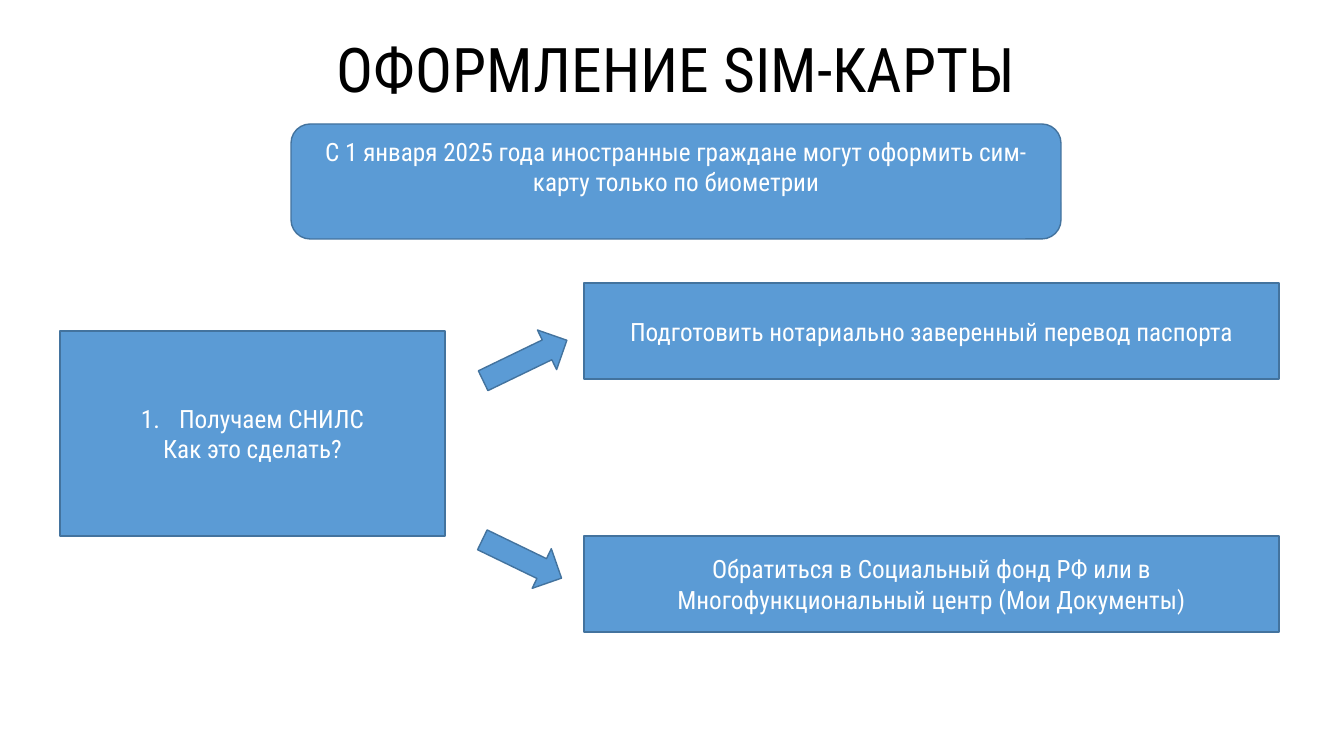
from lxml import etree
from pptx import Presentation
from pptx import util as u
from pptx.dml.color import RGBColor
from pptx.enum import shapes, text
from pptx.oxml.ns import qn

FONT = "Roboto Condensed"
BLACK = RGBColor(0x00, 0x00, 0x00)
WHITE = RGBColor(0xFF, 0xFF, 0xFF)
BLUE = RGBColor(0x5B, 0x9B, 0xD5)
OUTLINE = RGBColor(0x43, 0x73, 0x9E)
RECT = shapes.MSO_SHAPE.RECTANGLE
ROUNDED = shapes.MSO_SHAPE.ROUNDED_RECTANGLE
ARROW = shapes.MSO_SHAPE.DOWN_ARROW

TITLE = "ОФОРМЛЕНИЕ SIM-КАРТЫ"
RULE = "С 1 января 2025 года иностранные граждане могут оформить сим-карту только по биометрии"
GOAL = ["Получаем СНИЛС", "Как это сделать?"]
STEPS = [
    ("Подготовить нотариально заверенный перевод паспорта", 283),
    ("Обратиться в Социальный фонд РФ или в Многофункциональный центр (Мои Документы)", 536),
]
ARROWS = [((503, 314, 44, 93), -1), ((500, 515, 44, 88), 1)]
STEP_LEFT, STEP_WIDTH, STEP_HEIGHT = 584, 695, 96
LINE_HEIGHT = 30
NUMBER_INDENT = 38
TILT = 25.8


def px(length):
    return round(length * 914400 / 100.8)


def write(holder, lines, size=18, color=WHITE, spacing=None, numbered=False, lift=0):
    frame = holder.text_frame
    frame.word_wrap = True
    frame.vertical_anchor = text.MSO_ANCHOR.MIDDLE
    frame.margin_bottom = px(5 + lift)
    for i, line in enumerate(lines):
        paragraph = frame.paragraphs[0] if i == 0 else frame.add_paragraph()
        paragraph.alignment = text.PP_ALIGN.CENTER
        if spacing:
            paragraph.line_spacing = spacing
        if numbered and i == 0:
            props = paragraph._p.get_or_add_pPr()
            props.set("marL", str(px(NUMBER_INDENT)))
            props.set("indent", str(-px(NUMBER_INDENT)))
            etree.SubElement(props, qn("a:buAutoNum"), type="arabicPeriod")
        run = paragraph.add_run()
        run.text = line
        run.font.name = FONT
        run.font.size = u.Pt(size)
        run.font.color.rgb = color


def draw(slide, kind, box):
    shape = slide.shapes.add_shape(kind, *map(px, box))
    shape.shadow.inherit = False
    shape.fill.solid()
    shape.fill.fore_color.rgb = BLUE
    shape.line.color.rgb = OUTLINE
    shape.line.width = u.Pt(1)
    return shape


def main():
    deck = Presentation()
    deck.slide_width, deck.slide_height = px(1344), px(756)
    slide = deck.slides.add_slide(deck.slide_layouts[6])

    title = slide.shapes.add_textbox(*map(px, (97, 0, 1159, 146)))
    write(title, [TITLE], size=44, color=BLACK, spacing=0.9)

    write(draw(slide, ROUNDED, (291, 124, 770, 115)), [RULE], lift=LINE_HEIGHT)
    write(draw(slide, RECT, (60, 331, 385, 205)), GOAL, numbered=True)
    for step, top in STEPS:
        write(draw(slide, RECT, (STEP_LEFT, top, STEP_WIDTH, STEP_HEIGHT)), [step])
    for box, direction in ARROWS:
        draw(slide, ARROW, box).rotation = 270 + direction * TILT

    deck.save("out.pptx")


if __name__ == "__main__":
    main()
